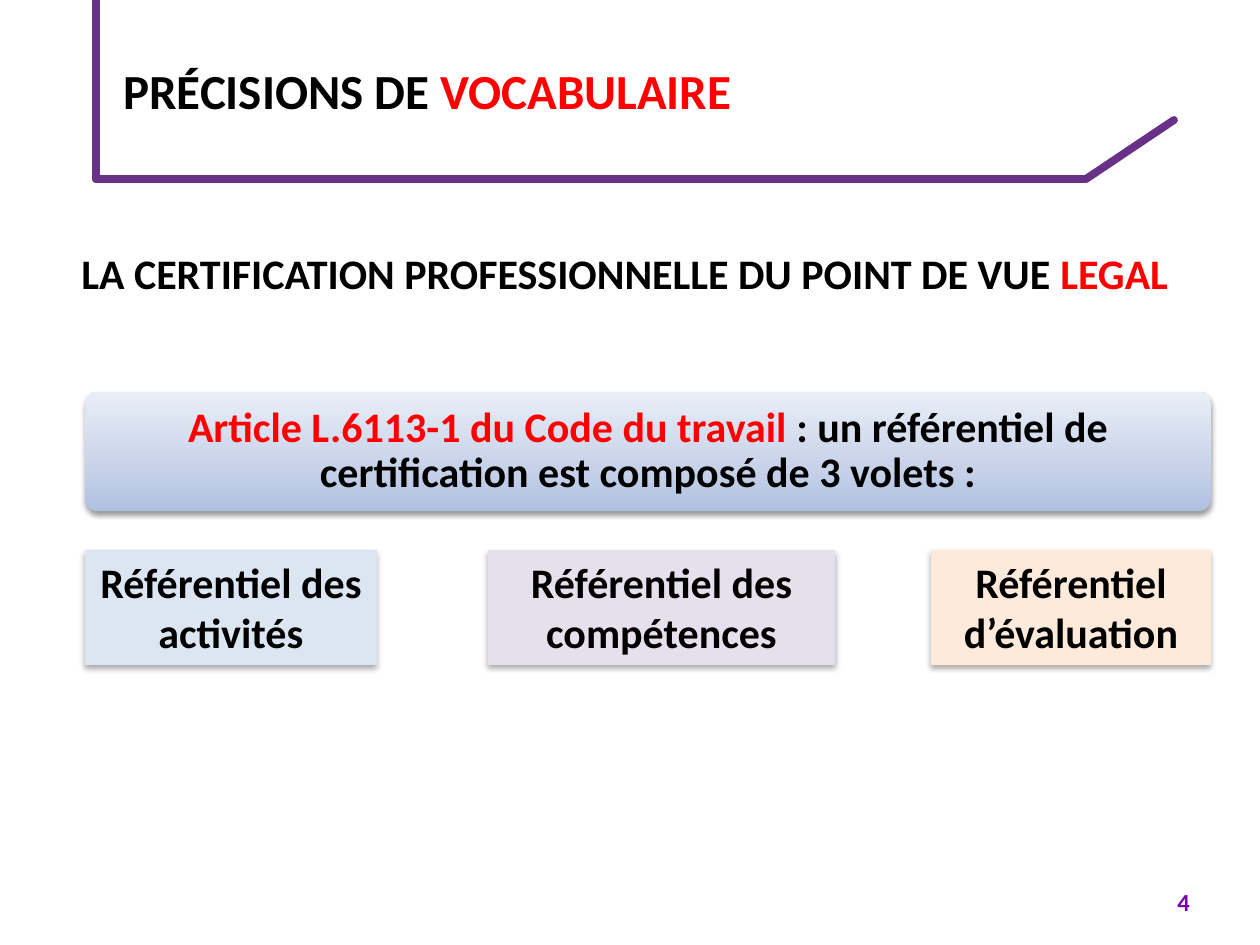
import pptx
import pptx.util
import pptx.dml.color
import pptx.enum.shapes
import pptx.enum.text
import pptx.oxml
import pptx.oxml.ns
import copy

RGBColor = pptx.dml.color.RGBColor
SHAPE = pptx.enum.shapes.MSO_SHAPE
ALIGN = pptx.enum.text.PP_ALIGN
ANCHOR = pptx.enum.text.MSO_ANCHOR

PX = 914400 / 126
FONT = "Calibri"
BLACK = RGBColor(0x00, 0x00, 0x00)
RED = RGBColor(0xFF, 0x00, 0x00)
PURPLE = RGBColor(0x68, 0x30, 0x86)
VIOLET = RGBColor(0x7B, 0x00, 0xAC)
BLUE_TINT = RGBColor(0xDC, 0xE6, 0xF2)
LILAC_TINT = RGBColor(0xE6, 0xE0, 0xEC)
ORANGE_TINT = RGBColor(0xFD, 0xEA, 0xDA)
BANNER_STOPS = [
    (0, RGBColor(0xAF, 0xC0, 0xE1)),
    (0.35, RGBColor(0xC7, 0xD2, 0xE9)),
    (1, RGBColor(0xE9, 0xEE, 0xF7)),
]


def emu(*lengths):
    return [round(length * PX) for length in lengths]


def set_values(target, values):
    for name, value in values.items():
        setattr(target, name, value)


def write_text(shape, runs, size, paragraph_format=None, **frame_format):
    """Write one paragraph made of (text, colour) runs."""
    frame = shape.text_frame
    set_values(frame, {"word_wrap": True, **frame_format})
    paragraph = frame.paragraphs[0]
    set_values(paragraph, {"alignment": ALIGN.LEFT, **(paragraph_format or {})})
    for text, colour in runs:
        run = paragraph.add_run()
        run.text = text
        set_values(run.font, {"name": FONT, "size": pptx.util.Pt(size), "bold": True})
        run.font.color.rgb = colour


def add_text(slide, box, runs, size, **formats):
    textbox = slide.shapes.add_textbox(*emu(*box))
    write_text(textbox, runs, size, **formats)


def add_panel(slide, kind, box, blur, distance, opacity):
    """Add a borderless shape with a soft shadow below it."""
    shape = slide.shapes.add_shape(kind, *emu(*box))
    shape.line.fill.background()
    shape.shadow.inherit = False
    effects = shape._element.spPr.find(pptx.oxml.ns.qn("a:effectLst"))
    effects.append(pptx.oxml.parse_xml(
        f'<a:outerShdw {pptx.oxml.ns.nsdecls("a")} blurRad="{pptx.util.Pt(blur)}" '
        f'dist="{pptx.util.Pt(distance)}" dir="5400000" rotWithShape="0">'
        f'<a:srgbClr val="000000"><a:alpha val="{opacity * 1000}"/></a:srgbClr>'
        '</a:outerShdw>'))
    return shape


def add_header(slide, box):
    left, top, width, height = box
    # Frame lines: left side, bottom, then the rising end
    points = [(0, 0), (0, height), (width - 88, height), (width, height - 59)]
    for start, end in zip(points, points[1:]):
        ends = emu(left + start[0], top + start[1], left + end[0], top + end[1])
        connector = slide.shapes.add_connector(
            pptx.enum.shapes.MSO_CONNECTOR.STRAIGHT, *ends)
        connector.line.color.rgb = PURPLE
        connector.line.width = pptx.util.Pt(4.5)
        connector.line._get_or_add_ln().set("cap", "rnd")
        connector._element.spPr.append(
            pptx.oxml.parse_xml(f'<a:effectLst {pptx.oxml.ns.nsdecls("a")}/>'))
    # Title
    add_text(slide, (left + 15, top, width + 8, height),
             [("PRÉCISIONS DE ", BLACK), ("VOCABULAIRE", RED)], 28,
             vertical_anchor=ANCHOR.MIDDLE)


def add_banner(slide, box):
    banner = add_panel(slide, SHAPE.ROUNDED_RECTANGLE, box, 3.1, 1.6, 38)
    banner.adjustments[0] = 0.1
    # Three-stop gradient, darkest at the bottom
    banner.fill.gradient()
    banner.fill.gradient_angle = 90
    stop_list = banner._element.spPr.find(".//" + pptx.oxml.ns.qn("a:gsLst"))
    stop_list.append(copy.deepcopy(stop_list[-1]))
    for stop, (position, colour) in zip(banner.fill.gradient_stops, BANNER_STOPS):
        stop.position = position
        stop.color.rgb = colour
    inset = pptx.util.Inches(0.12)
    write_text(banner,
               [("Article L.6113-1 du Code du travail ", RED),
                (": un référentiel de certification est composé de 3 volets :", BLACK)],
               24, {"alignment": ALIGN.CENTER, "line_spacing": 0.9},
               vertical_anchor=ANCHOR.MIDDLE, margin_left=inset, margin_right=inset)


def add_components(slide, box):
    left, top, width, height = box
    components = [
        (0, 292, "Référentiel des activités", BLUE_TINT),
        (403, 347, "Référentiel des compétences", LILAC_TINT),
        (width - 280, 280, "Référentiel d’évaluation", ORANGE_TINT),
    ]
    for offset, card_width, text, colour in components:
        card = add_panel(slide, SHAPE.RECTANGLE,
                         (left + offset, top, card_width, height), 3.5, 2.2, 32)
        card.fill.solid()
        card.fill.fore_color.rgb = colour
        write_text(card, [(text, BLACK)], 24, {"alignment": ALIGN.CENTER},
                   vertical_anchor=ANCHOR.TOP)


def main():
    presentation = pptx.Presentation()
    presentation.slide_width, presentation.slide_height = emu(1260, 945)
    slide = presentation.slides.add_slide(presentation.slide_layouts[6])

    add_header(slide, (96, 0, 1078, 179))
    # Subtitle
    add_text(slide, (69, 184, 1142, 178),
             [("LA CERTIFICATION PROFESSIONNELLE DU POINT DE VUE ", BLACK),
              ("LEGAL", RED)], 24, vertical_anchor=ANCHOR.MIDDLE)
    add_banner(slide, (85, 392, 1126, 119))
    add_components(slide, (85, 550, 1126, 115))
    # Slide number
    add_text(slide, (1165, 881, 84, 50), [("4", VIOLET)], 14)

    presentation.save("out.pptx")


if __name__ == "__main__":
    main()
